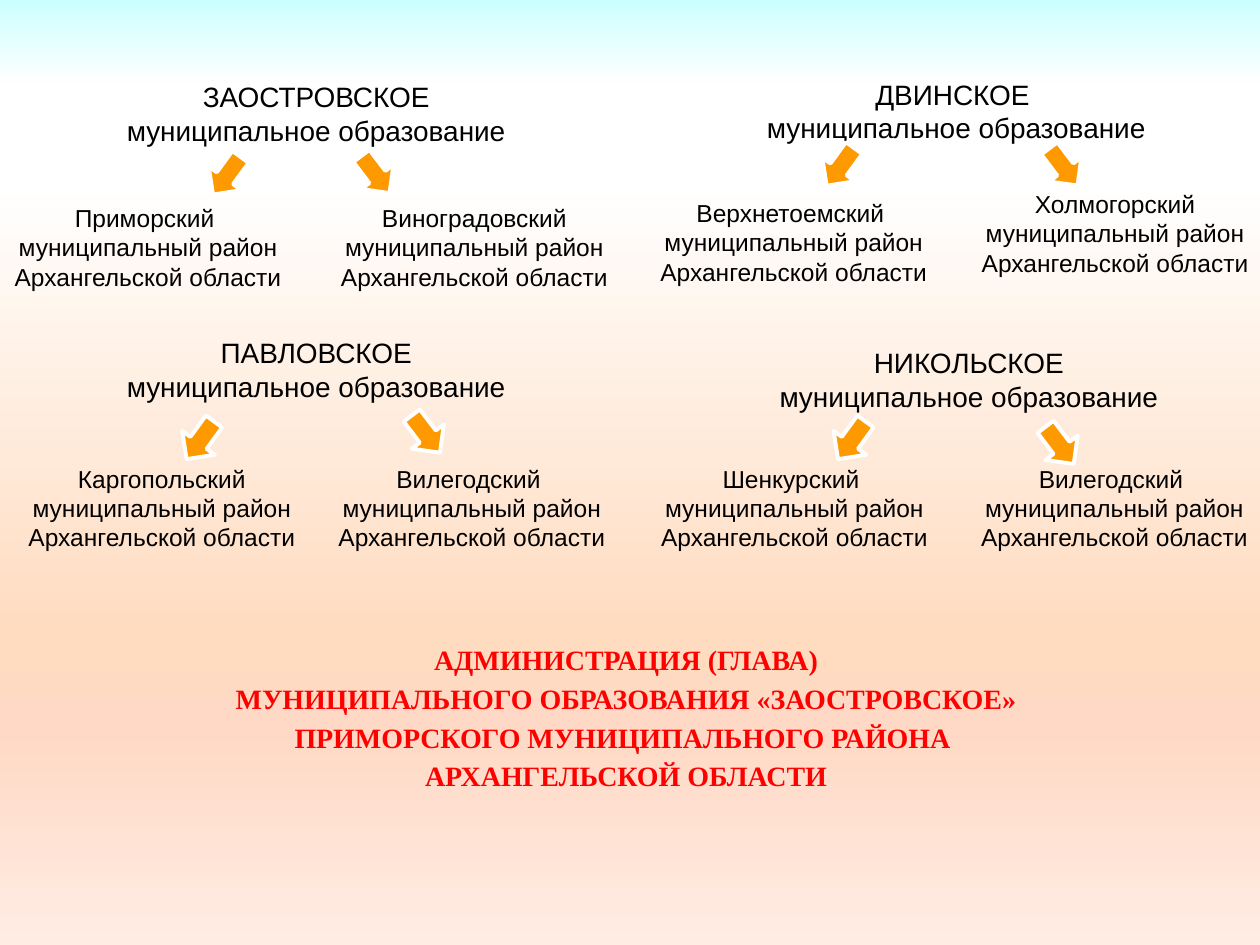
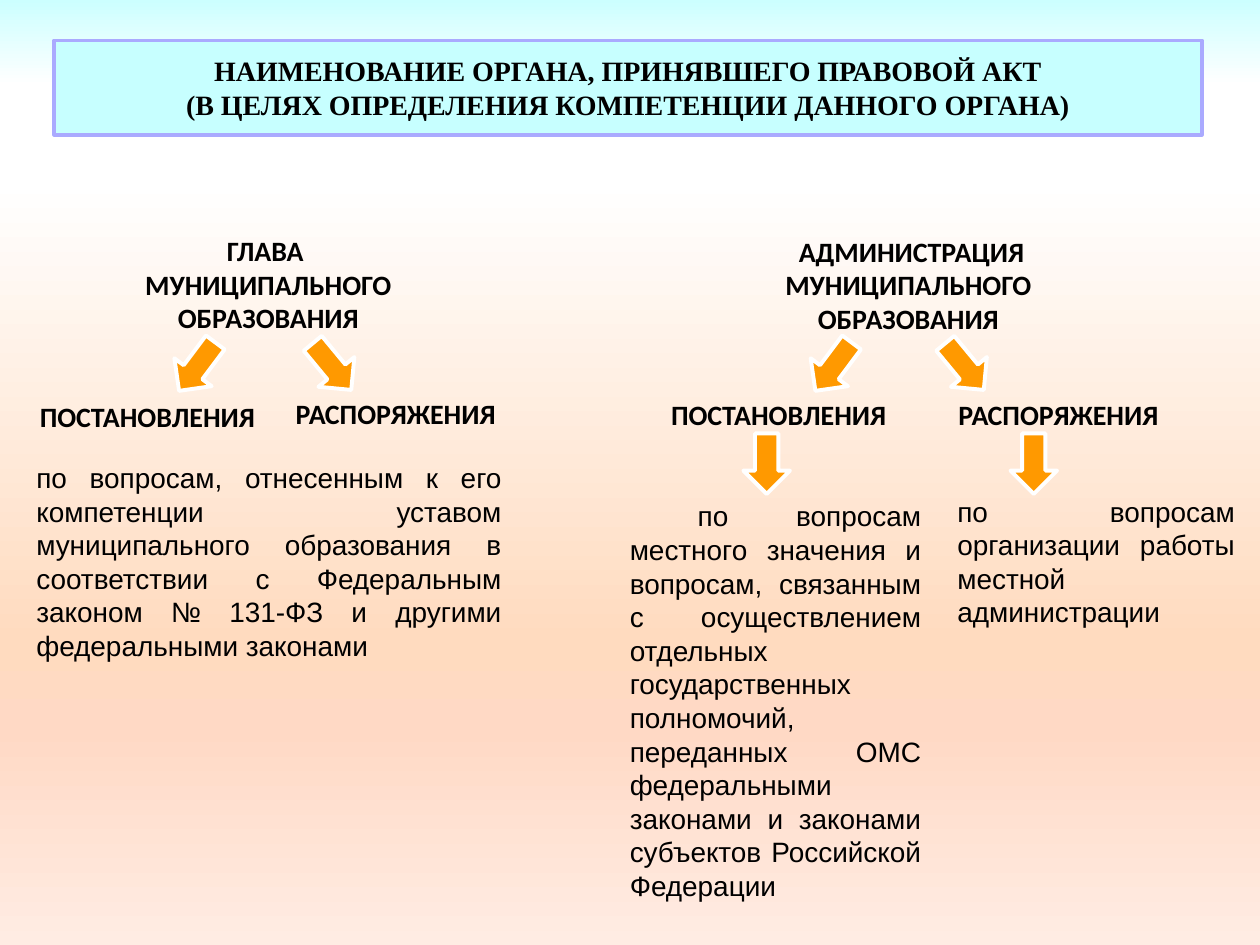
from lxml.etree import SubElement
from pptx import Presentation
from pptx.dml.color import RGBColor
from pptx.enum.shapes import MSO_SHAPE as SHAPE
from pptx.enum.text import MSO_ANCHOR as ANCHOR, PP_ALIGN as ALIGN
from pptx.oxml.ns import qn
from pptx.util import Inches, Pt

COLORS = {
    "text": "000000", "accent": "FF0000",
    "arrow": "FF9900", "arrow_line": "FFFFFF",
    "title_fill": "C7FFFF", "title_line": "AAAAFF",
}
BACKGROUND = [(0, "CCFFFF"), (9, "FFFFFF"), (19, "FFFFFF"),
              (68, "FFDBBF"), (77, "FFD9C5"), (100, "FFECE3")]
BODY, LABEL, SERIF = "Arial", "Calibri", "Times New Roman"
DISTRICT = "муниципальный район Архангельской области"
MUNICIPALITY = "муниципальное образование "


def rgb(name):
    return RGBColor.from_string(COLORS[name])


class Deck:
    def __init__(self):
        self.prs = Presentation()
        self.prs.slide_width, self.prs.slide_height = Inches(10), Inches(7.5)
        self.slide = None
        self.paint_background()

    def paint_background(self):
        """Give the master a vertical gradient, so every slide inherits it."""
        master = self.prs.slide_master
        fill = master.background.fill
        fill.gradient()
        fill.gradient_angle = 270
        stops = master.element.find(".//" + qn("a:gsLst"))
        for gs in list(stops):
            stops.remove(gs)
        for percent, color in BACKGROUND:
            gs = SubElement(stops, qn("a:gs"), pos=str(percent * 1000))
            SubElement(gs, qn("a:srgbClr"), val=color)

    def add_slide(self):
        self.slide = self.prs.slides.add_slide(self.prs.slide_layouts[6])

    def fill_text(self, sp, lines, size=16, font=BODY, bold=False,
                  color="text", align=ALIGN.CENTER, spacing=None):
        tf = sp.text_frame
        tf.word_wrap = True
        tf.vertical_anchor = ANCHOR.MIDDLE
        for i, line in enumerate(lines):
            p = tf.paragraphs[0] if i == 0 else tf.add_paragraph()
            p.alignment = align
            if spacing:
                p.line_spacing = spacing
            r = p.add_run()
            r.text = line
            r.font.size, r.font.name, r.font.bold = Pt(size), font, bold
            r.font.color.rgb = rgb(color)

    def text(self, box, *lines, **style):
        sp = self.slide.shapes.add_textbox(*map(Inches, box))
        self.fill_text(sp, lines, **style)

    def shape(self, kind, box, fill, line, width):
        sp = self.slide.shapes.add_shape(kind, *map(Inches, box))
        sp.shadow.inherit = False
        sp.fill.solid()
        sp.fill.fore_color.rgb = rgb(fill)
        sp.line.color.rgb = rgb(line)
        sp.line.width = Pt(width)
        return sp

    def title(self, *lines):
        sp = self.shape(SHAPE.RECTANGLE, (0.43, 0.32, 9.11, 0.75),
                        "title_fill", "title_line", 2)
        self.fill_text(sp, lines, font=SERIF, bold=True)

    def arrow(self, x, y, size, angle=0):
        sp = self.shape(SHAPE.DOWN_ARROW, (x, y, *size),
                        "arrow", "arrow_line", 2.25)
        sp.rotation = angle % 360


def districts_slide(deck):
    deck.add_slide()
    for box, lines in [
        ((0.88, 0.47, 3.26, 0.86), ["ЗАОСТРОВСКОЕ " + MUNICIPALITY]),
        ((5.83, 0.45, 3.52, 0.86), ["ДВИНСКОЕ ", " " + MUNICIPALITY]),
        ((0.88, 2.5, 3.26, 0.86), ["ПАВЛОВСКОЕ " + MUNICIPALITY]),
        ((6.06, 2.58, 3.26, 0.86), ["НИКОЛЬСКОЕ " + MUNICIPALITY]),
    ]:
        deck.text(box, *lines)

    for box, name in [
        ((-0.36, 1.53, 3.07, 0.86), "Приморский "),
        ((2.42, 1.53, 2.69, 0.86), "Виноградовский"),
        ((5.01, 1.49, 2.58, 0.86), "Верхнетоемский "),
        ((7.43, 1.35, 2.84, 1), "Холмогорский"),
        ((-0.25, 3.6, 3.07, 0.86), "Каргопольский"),
        ((2.37, 3.6, 2.75, 0.86), "Вилегодский "),
        ((4.77, 3.6, 3.07, 0.86), "Шенкурский "),
        ((7.31, 3.6, 3.07, 0.86), "Вилегодский "),
    ]:
        deck.text(box, name, DISTRICT, size=14)

    arrow_size = (0.32, 0.37)
    for left, right in [((1.64, 1.21), (2.82, 1.2)),
                        ((6.51, 1.14), (8.28, 1.14)),
                        ((1.43, 3.31), (3.22, 3.26)),
                        ((6.6, 3.31), (8.25, 3.35))]:
        deck.arrow(*left, arrow_size, 36.1)
        deck.arrow(*right, arrow_size, -37.1)

    deck.text((0.62, 4.83, 8.7, 1.69),
              "АДМИНИСТРАЦИЯ (ГЛАВА)",
              "МУНИЦИПАЛЬНОГО ОБРАЗОВАНИЯ «ЗАОСТРОВСКОЕ»",
              "ПРИМОРСКОГО МУНИЦИПАЛЬНОГО РАЙОНА ",
              "АРХАНГЕЛЬСКОЙ ОБЛАСТИ",
              font=SERIF, bold=True, color="accent", spacing=1.15)


def authorities_slide(deck):
    deck.add_slide()
    deck.title("НАИМЕНОВАНИЕ ОРГАНА, ПРИНЯВШЕГО ПРАВОВОЙ АКТ",
               "(В ЦЕЛЯХ ОПРЕДЕЛЕНИЯ КОМПЕТЕНЦИИ ДАННОГО ОРГАНА)")

    label = {"font": LABEL, "bold": True}
    deck.text((0.58, 1.76, 3.1, 0.99),
              "ГЛАВА ", "МУНИЦИПАЛЬНОГО ОБРАЗОВАНИЯ", **label)
    deck.text((5.66, 1.7, 3.1, 1.12),
              " АДМИНИСТРАЦИЯ МУНИЦИПАЛЬНОГО ОБРАЗОВАНИЯ", **label)
    for x, y, act in [(0.15, 2.99, " ПОСТАНОВЛЕНИЯ"),
                      (2.12, 2.97, " РАСПОРЯЖЕНИЯ"),
                      (5.16, 2.98, " ПОСТАНОВЛЕНИЯ"),
                      (7.38, 2.98, " РАСПОРЯЖЕНИЯ")]:
        deck.text((x, y, 1.99, 0.62), act, **label)

    for box, scope in [
        ((0.19, 3.44, 3.89, 2.03),
         "по вопросам, отнесенным к его компетенции уставом муниципального "
         "образования в соответствии с Федеральным законом № 131-ФЗ и другими "
         "федеральными законами"),
        ((4.9, 3.91, 2.51, 3.3),
         " по вопросам местного значения и вопросам, связанным с "
         "осуществлением отдельных государственных полномочий, переданных "
         "ОМС федеральными законами и законами субъектов Российской Федерации"),
        ((7.5, 3.74, 2.4, 1.43),
         "по вопросам организации работы местной администрации"),
    ]:
        deck.text(box, scope, align=ALIGN.JUSTIFY)

    arrow_size = (0.37, 0.48)
    for left, right in [(1.38, 2.45), (6.43, 7.47)]:
        deck.arrow(left, 2.67, arrow_size, 36.8)
        deck.arrow(right, 2.67, arrow_size, -39.6)
    for x in (5.9, 8.02):
        deck.arrow(x, 3.44, arrow_size)


def main():
    deck = Deck()
    districts_slide(deck)
    authorities_slide(deck)
    deck.prs.save("out.pptx")


if __name__ == "__main__":
    main()
